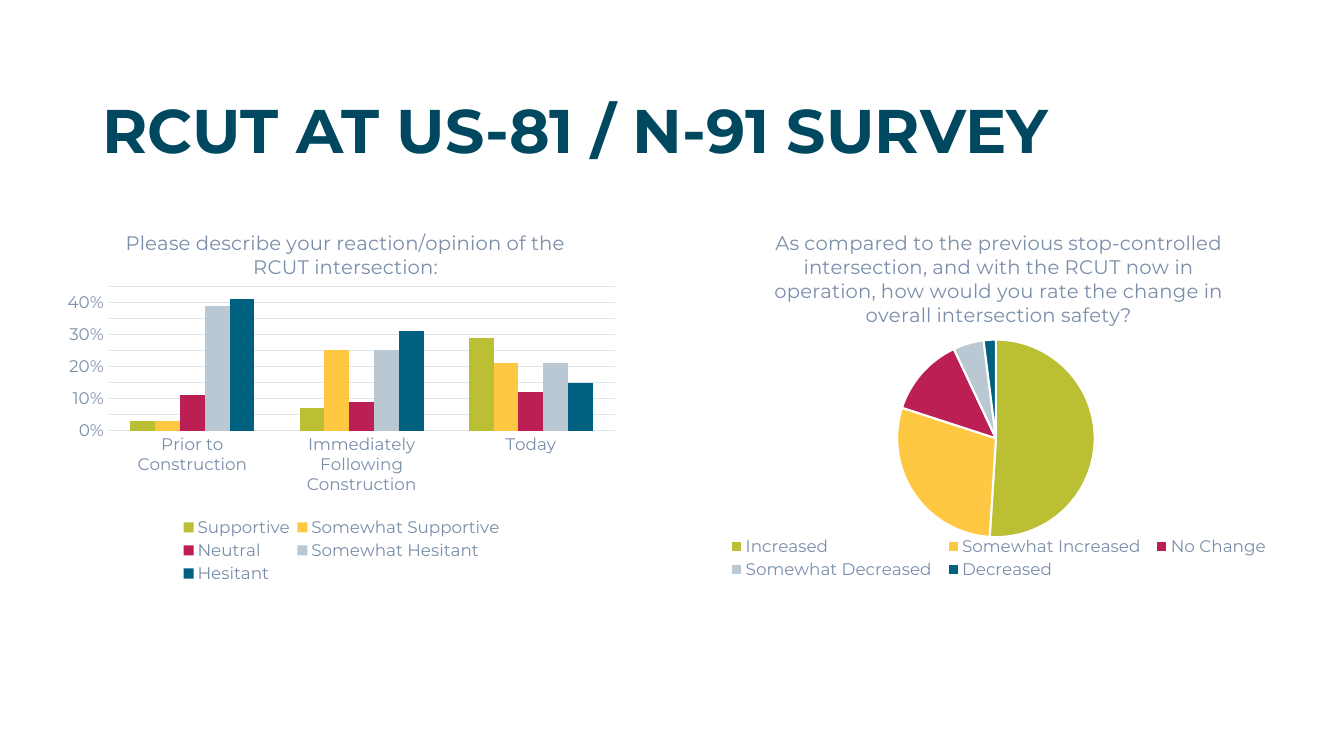
from lxml import etree
from pptx import Presentation
from pptx.chart.data import CategoryChartData
from pptx.dml.color import RGBColor
from pptx.enum import chart as charts, text
from pptx.oxml import ns
from pptx.util import Pt

TEAL = RGBColor(0x00, 0x48, 0x5F)
SLATE = RGBColor(0x7A, 0x8E, 0xAA)
DARK_SLATE = RGBColor(0x44, 0x54, 0x6A)
GRID = RGBColor(0xE0, 0xE5, 0xEB)
WHITE = RGBColor(0xFF, 0xFF, 0xFF)
ANSWER_COLORS = [
    RGBColor(0xBA, 0xBF, 0x33),
    RGBColor(0xFF, 0xC8, 0x43),
    RGBColor(0xBB, 0x1F, 0x53),
    RGBColor(0xB9, 0xC8, 0xD3),
    RGBColor(0x00, 0x60, 0x7F),
]
FONT = "Montserrat"

REACTION_QUESTION = "Please describe your reaction/opinion of the RCUT intersection:"
PERIODS = ["Prior to Construction", "Immediately Following Construction", "Today"]
REACTIONS = {
    "Supportive": (0.03, 0.07, 0.29),
    "Somewhat Supportive": (0.03, 0.25, 0.21),
    "Neutral": (0.11, 0.09, 0.12),
    "Somewhat Hesitant": (0.39, 0.25, 0.21),
    "Hesitant": (0.41, 0.31, 0.15),
}
SAFETY_QUESTION = (
    "As compared to the previous stop-controlled intersection, and with the RCUT now in "
    "operation, how would you rate the change in overall intersection safety?"
)
SAFETY = {
    "Increased": 51,
    "Somewhat Increased": 29,
    "No Change": 13,
    "Somewhat Decreased": 5,
    "Decreased": 2,
}


def place(element, index, inner=False, **fractions):
    """Give a chart part a manual layout in fractions of the chart's size."""
    for old in element.findall(ns.qn("c:layout")):
        element.remove(old)
    layout = etree.Element(ns.qn("c:layout"))
    manual = etree.SubElement(layout, ns.qn("c:manualLayout"))
    settings = {"layoutTarget": "inner"} if inner else {}
    settings.update(xMode="edge", yMode="edge", **fractions)
    for name, value in settings.items():
        etree.SubElement(manual, ns.qn(f"c:{name}")).set("val", str(value))
    element.insert(index, layout)


class SurveySlide:
    def __init__(self, presentation):
        self.slide = presentation.slides.add_slide(presentation.slide_layouts[5])

    def style(self, font, size, color=SLATE, bold=False):
        font.name, font.size, font.bold = FONT, Pt(size), bold
        font.color.rgb = color

    def title(self, wording, left, top, width, height):
        title = self.slide.shapes.title
        title.left, title.top = Pt(left), Pt(top)
        title.width, title.height = Pt(width), Pt(height)
        title.text_frame.text = wording
        title.text_frame.vertical_anchor = text.MSO_ANCHOR.MIDDLE
        paragraph = title.text_frame.paragraphs[0]
        paragraph.alignment = text.PP_ALIGN.LEFT
        paragraph.line_spacing = 0.9
        self.style(paragraph.font, 44, TEAL, bold=True)

    def chart(self, kind, question, data, box, plot, legend):
        """Add a chart with its question on top and its legend below."""
        frame = self.slide.shapes.add_chart(kind, *map(Pt, box), data)
        chart = frame.chart
        self.style(chart.font, 10, DARK_SLATE)
        chart.has_title = True
        chart.chart_title.text_frame.text = question
        self.style(chart.chart_title.text_frame.paragraphs[0].font, 14)
        chart.chart_title.include_in_layout = False
        chart.has_legend = True
        chart.legend.position = charts.XL_LEGEND_POSITION.BOTTOM
        chart.legend.include_in_layout = False
        self.style(chart.legend.font, 12)
        plot_area = chart.plots[0]._element.getparent()
        place(plot_area, 0, inner=True, **plot)
        place(chart.chart_title._element, 1, x=0.115, y=0.05)
        place(chart.legend._element, 1, **legend)
        return chart

    def column_chart(self, *arguments):
        chart = self.chart(charts.XL_CHART_TYPE.COLUMN_CLUSTERED, *arguments)
        plot = chart.plots[0]
        plot.gap_width, plot.overlap, plot.vary_by_categories = 182, 0, False
        for series, color in zip(plot.series, ANSWER_COLORS):
            series.format.fill.solid()
            series.format.fill.fore_color.rgb = color
        for axis in (chart.category_axis, chart.value_axis):
            axis.major_tick_mark = axis.minor_tick_mark = charts.XL_TICK_MARK.NONE
            self.style(axis.tick_labels.font, 12)
        values = chart.value_axis
        values.minimum_scale, values.maximum_scale, values.major_unit = 0, 0.45, 0.05
        values.tick_labels.number_format = "0%"
        values.tick_labels.number_format_is_linked = False
        values.format.line.fill.background()
        for line in (chart.category_axis.format.line, values.major_gridlines.format.line):
            line.color.rgb = GRID
            line.width = Pt(0.75)

    def pie_chart(self, *arguments):
        chart = self.chart(charts.XL_CHART_TYPE.PIE, *arguments)
        plot = chart.plots[0]
        plot.vary_by_categories = True
        for index, color in enumerate(ANSWER_COLORS):
            slice_format = plot.series[0].points[index].format
            slice_format.fill.solid()
            slice_format.fill.fore_color.rgb = color
            slice_format.line.color.rgb = WHITE
            slice_format.line.width = Pt(1.5)


def main():
    presentation = Presentation()
    presentation.slide_width, presentation.slide_height = Pt(960), Pt(540)
    survey = SurveySlide(presentation)
    survey.title("RCUT AT US-81 / N-91 SURVEY", 66, 43, 828, 104.4)

    reactions = CategoryChartData(number_format="0%")
    reactions.categories = PERIODS
    for answer, shares in REACTIONS.items():
        reactions.add_series(answer, shares)
    survey.column_chart(
        REACTION_QUESTION, reactions, (40.3, 147.6, 407.5, 271.4),
        dict(x=0.09, y=0.21, w=0.89, h=0.38),
        dict(x=0.21, y=0.81, w=0.58, h=0.19),
    )

    safety = CategoryChartData()
    safety.categories = list(SAFETY)
    safety.add_series("Series 1", SAFETY.values())
    survey.pie_chart(
        SAFETY_QUESTION, safety, (502.6, 147.6, 417.6, 271.4),
        dict(x=0.33, y=0.35, w=0.34, h=0.52),
        dict(x=0.03, y=0.86, w=0.95, h=0.13),
    )
    presentation.save("out.pptx")


if __name__ == "__main__":
    main()
